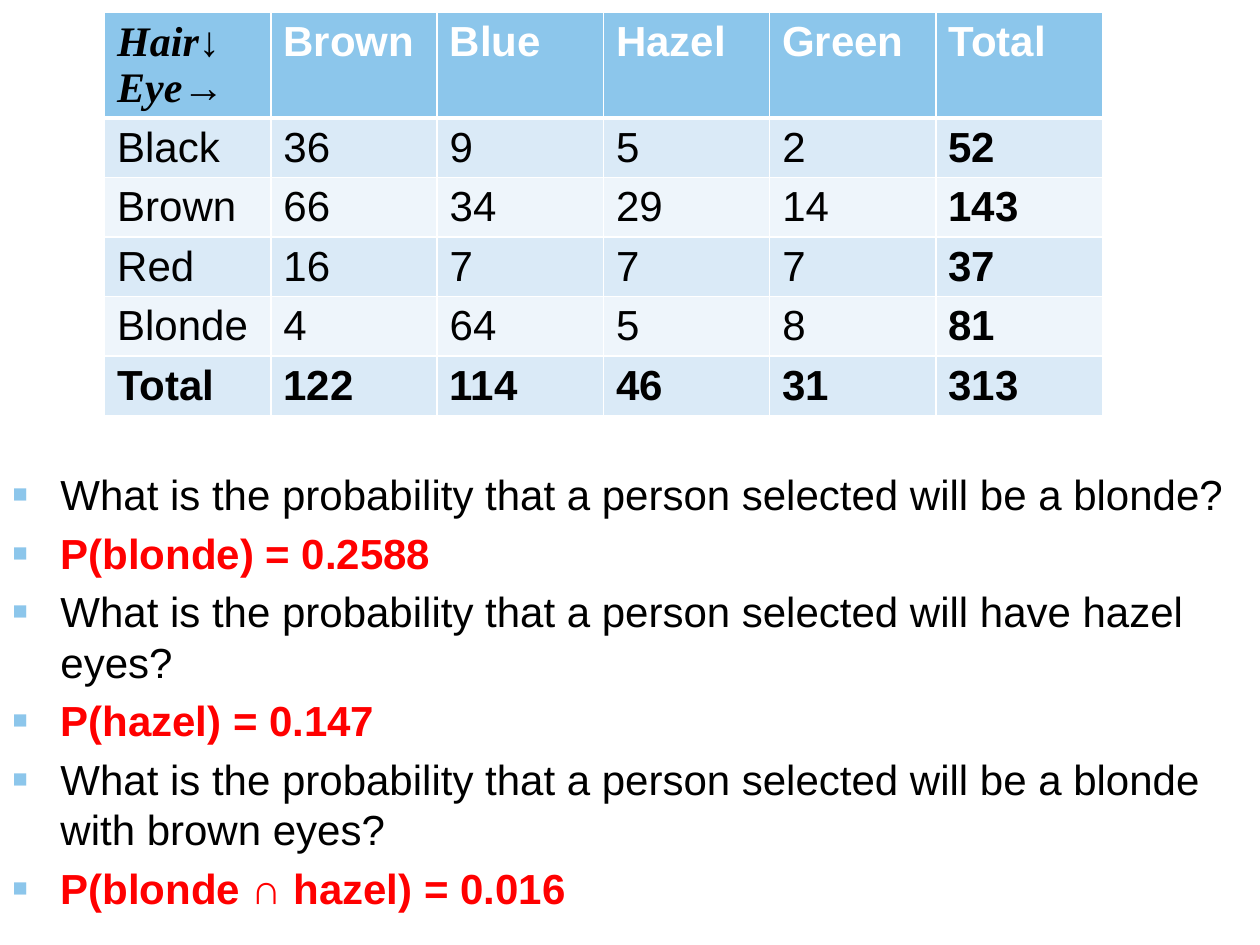
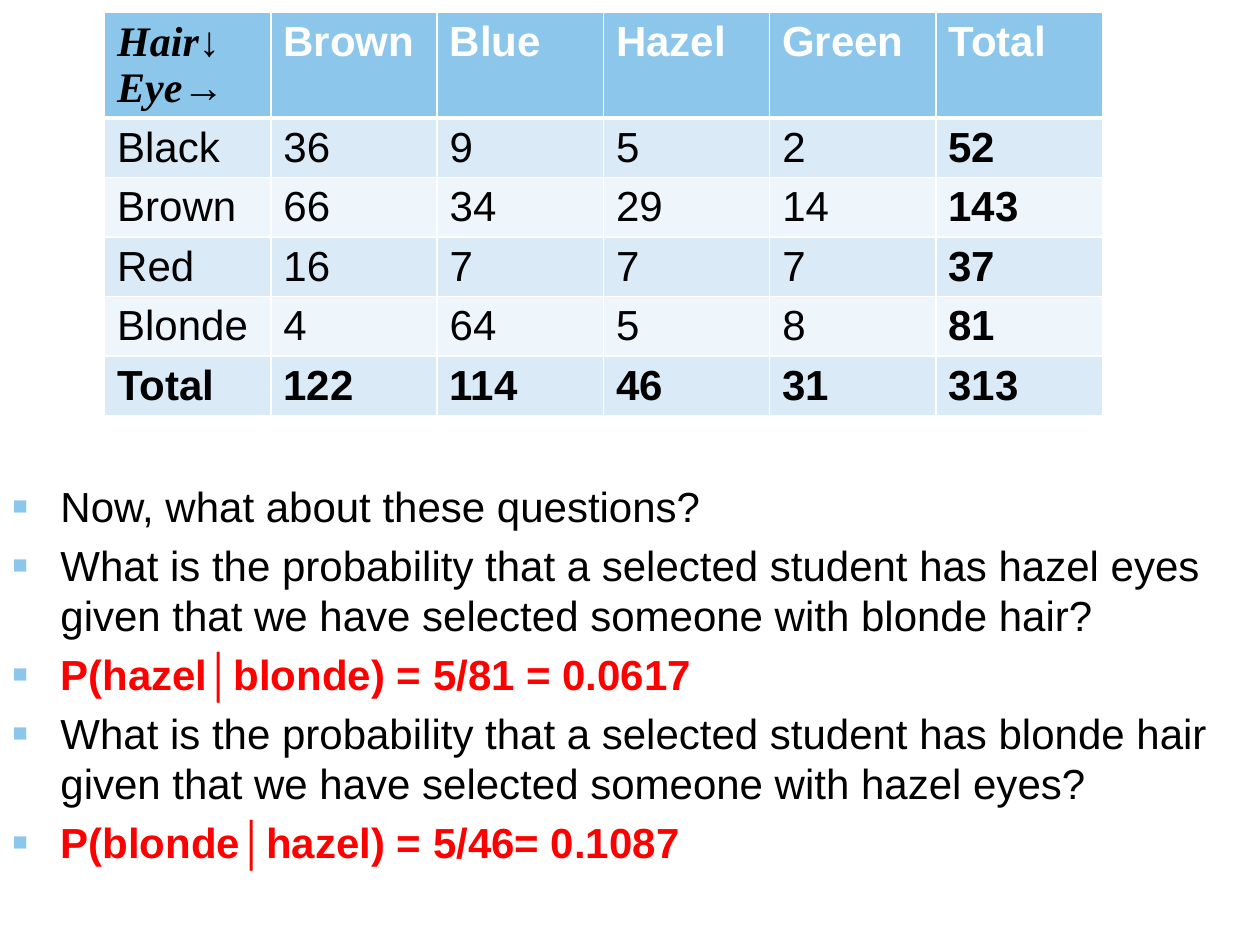
from lxml.etree import SubElement as add_xml
from pptx import Presentation
from pptx.dml.color import RGBColor as Color
from pptx.enum.text import MSO_ANCHOR as Anchor, MSO_AUTO_SIZE as AutoSize
from pptx.oxml.ns import qn
from pptx.util import Inches, Pt

COLORS = {
    "header": "8CC6EB", "odd_row": "DAEAF7", "even_row": "EEF5FB",
    "border": "FFFFFF", "header_text": "FFFFFF",
    "text": "000000", "answer": "FF0000", "bullet": "8CC6EB",
}

HAIR_EYE_COUNTS = [
    ["Hair↓ Eye→", "Brown", "Blue", "Hazel", "Green", "Total"],
    ["Black", "36", "9", "5", "2", "52"],
    ["Brown", "66", "34", "29", "14", "143"],
    ["Red", "16", "7", "7", "7", "37"],
    ["Blonde", "4", "64", "5", "8", "81"],
    ["Total", "122", "114", "46", "31", "313"],
]

# Top of the list in inches, then its lines as (text, is_answer)
PAGES = [
    (3.67, [
        ("What is the probability that a person selected will be a blonde?", False),
        ("P(blonde) = 0.2588", True),
        ("What is the probability that a person selected will have hazel eyes?", False),
        ("P(hazel) = 0.147", True),
        ("What is the probability that a person selected will be a blonde "
         "with brown eyes?", False),
        ("P(blonde ∩ hazel) = 0.016", True),
    ]),
    (3.77, [
        ("Now, what about these questions?", False),
        ("What is the probability that a selected student has hazel eyes "
         "given that we have selected someone with blonde hair?", False),
        ("P(hazel│blonde) = 5/81 = 0.0617", True),
        ("What is the probability that a selected student has blonde hair "
         "given that we have selected someone with hazel eyes?", False),
        ("P(blonde│hazel) = 5/46= 0.1087", True),
    ]),
]

LIST_FRAME = {
    "margin_left": Inches(0.1), "margin_top": Inches(0.05),
    "margin_right": 0, "margin_bottom": Inches(0.05),
    "word_wrap": True, "auto_size": AutoSize.NONE, "vertical_anchor": Anchor.TOP,
}
LIST_SPACING = {"line_spacing": Pt(28.6), "space_before": Pt(5), "space_after": Pt(0)}


def add_run(para, text, color, **font_values):
    span = para.add_run()
    span.text = text
    values = {"name": "Arial", "size": Pt(24), "bold": False, "italic": False}
    for name, value in (values | font_values).items():
        setattr(span.font, name, value)
    span.font.color.rgb = Color.from_string(COLORS[color])


def add_color(parent, color):
    fill = add_xml(parent, qn("a:solidFill"))
    add_xml(fill, qn("a:srgbClr"), val=COLORS[color])


deck = Presentation()
deck.slide_width, deck.slide_height = Inches(10), Inches(7.5)

for list_top, lines in PAGES:
    page = deck.slides.add_slide(deck.slide_layouts[1])
    title = page.shapes.title.element
    title.getparent().remove(title)

    # Questions and answers
    box = page.placeholders[1]
    box.left, box.top = 0, Inches(list_top)
    box.width, box.height = Inches(10), Inches(7.5 - list_top)
    for name, value in LIST_FRAME.items():
        setattr(box.text_frame, name, value)
    for index, (text, is_answer) in enumerate(lines):
        para = box.text_frame.add_paragraph() if index else box.text_frame.paragraphs[0]
        for name, value in LIST_SPACING.items():
            setattr(para, name, value)
        props = para._p.get_or_add_pPr()
        props.set("marL", str(Inches(0.38)))
        props.set("indent", str(-Inches(0.38)))
        bullet_color = add_xml(props, qn("a:buClr"))
        add_xml(bullet_color, qn("a:srgbClr"), val=COLORS["bullet"])
        add_xml(props, qn("a:buSzPct"), val="60000")
        add_xml(props, qn("a:buFont"), typeface="Arial")
        add_xml(props, qn("a:buChar"), char="■")
        add_run(para, text, "answer" if is_answer else "text", bold=is_answer)

    # Hair and eye colour counts
    row_count, column_count = len(HAIR_EYE_COUNTS), len(HAIR_EYE_COUNTS[0])
    table = page.shapes.add_table(
        row_count, column_count,
        Inches(0.83), Inches(0.1), Inches(7.92), Inches(3.18)).table
    for column in table.columns:
        column.width = Inches(1.32)
    for r, row in enumerate(HAIR_EYE_COUNTS):
        table.rows[r].height = Inches(0.47 if r else 0.83)
        row_fill = "header" if r == 0 else "odd_row" if r % 2 else "even_row"
        for c, text in enumerate(row):
            cell = table.cell(r, c)
            para = cell.text_frame.paragraphs[0]
            if r == c == 0:
                add_run(para, text, "text", name="Times New Roman", bold=True, italic=True)
            else:
                is_bold = r in (0, row_count - 1) or c == column_count - 1
                add_run(para, text, "text" if r else "header_text", bold=is_bold)
            cell_props = cell._tc.get_or_add_tcPr()
            widths = {"lnL": 1, "lnR": 1, "lnT": 3 if r == 1 else 1, "lnB": 1 if r else 3}
            for side, width in widths.items():
                border = add_xml(cell_props, qn(f"a:{side}"), w=str(Pt(width)))
                add_color(border, "border")
            cell.fill.solid()
            cell.fill.fore_color.rgb = Color.from_string(COLORS[row_fill])

deck.save("out.pptx")
